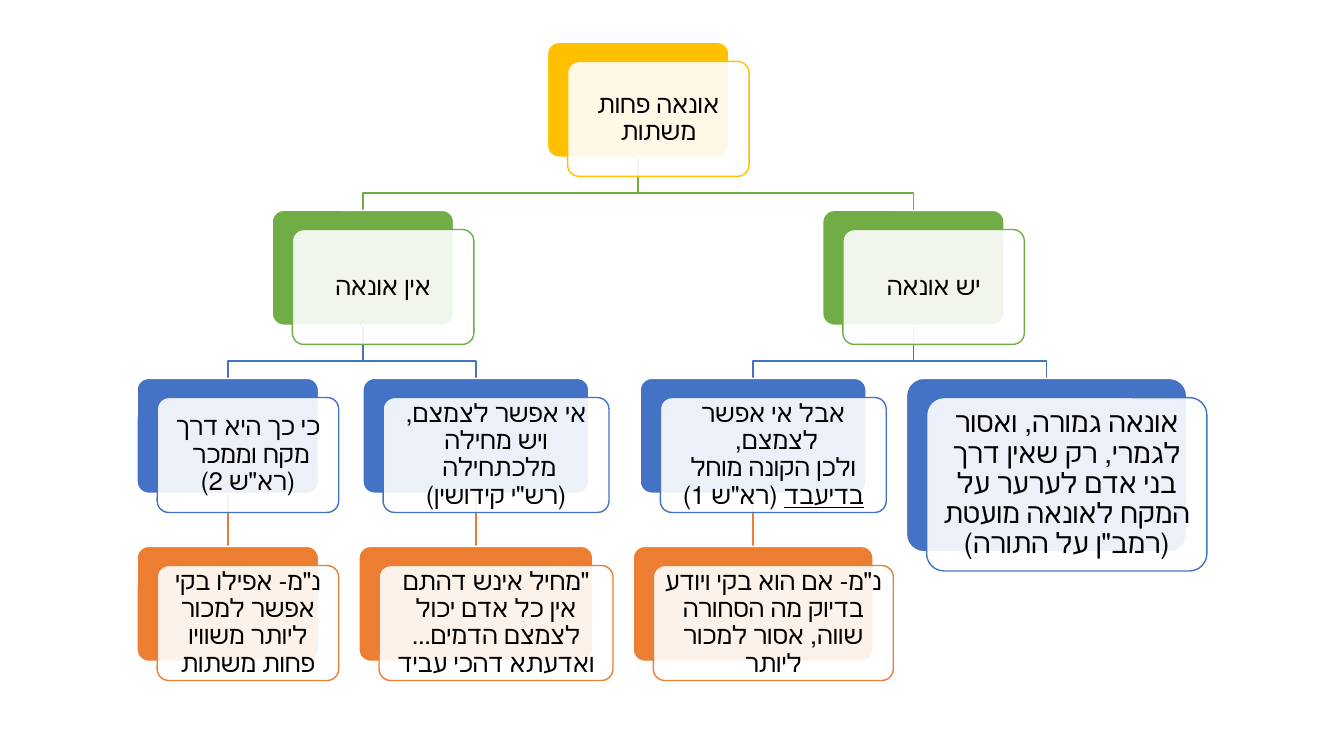
from pptx import Presentation
from pptx.dml.color import RGBColor
from pptx.enum.lang import MSO_LANGUAGE_ID
from pptx.enum.shapes import MSO_CONNECTOR, MSO_SHAPE
from pptx.enum.text import MSO_ANCHOR, PP_ALIGN
from pptx.oxml.ns import qn
from pptx.util import Inches, Pt
from lxml import etree

ROUNDED = MSO_SHAPE.ROUNDED_RECTANGLE
STRAIGHT = MSO_CONNECTOR.STRAIGHT
CENTER = PP_ALIGN.CENTER
MIDDLE = MSO_ANCHOR.MIDDLE
HEBREW = MSO_LANGUAGE_ID.HEBREW

LEVEL_COLORS = ["FFC000", "70AD47", "4472C4", "ED7D31"]
FONT = "Calibri"

# name: (parent, level, centre x, width, text); underscores enclose underlined words
NODES = {
    "root": (None, 0, 6.33, 1.8, "אונאה פחות משתות"),
    "applies": ("root", 1, 9.06, 1.8, "יש אונאה"),
    "exempt": ("root", 1, 3.6, 1.8, "אין אונאה"),
    "ramban": ("applies", 2, 10.38, 2.78,
               "אונאה גמורה, ואסור לגמרי, רק שאין דרך בני אדם לערער על המקח "
               "לאונאה מועטת\n(רמב\"ן על התורה)"),
    "rosh_one": ("applies", 2, 7.47, 2.24,
                 "אבל אי אפשר לצמצם, \nולכן הקונה מוחל _בדיעבד_ (רא\"ש 1)"),
    "expert_forbidden": ("rosh_one", 3, 7.47, 2.38,
                         "נ\"מ- אם הוא בקי ויודע בדיוק מה הסחורה שווה, אסור למכור ליותר"),
    "rashi": ("exempt", 2, 4.72, 2.24,
              "אי אפשר לצמצם, ויש מחילה מלכתחילה \n(רש\"י קידושין)"),
    "waiver": ("rashi", 3, 4.72, 2.32,
               "\"מחיל אינש דהתם אין כל אדם יכול לצמצם הדמים... ואדעתא דהכי עביד"),
    "rosh_two": ("exempt", 2, 2.26, 1.8, "כי כך היא דרך מקח וממכר \n(רא\"ש 2)"),
    "expert_allowed": ("rosh_two", 3, 2.26, 1.8,
                       "נ\"מ- אפילו בקי אפשר למכור ליותר משוויו פחות משתות"),
}
LARGE_NODE = "ramban"

TOP = 0.42
LEVEL_STEP = 1.667
BOX_HEIGHT = 1.14
LARGE_HEIGHT = 1.72
OFFSET_X, OFFSET_Y = 0.2, 0.19
BEND = 0.355


def color(hex_string):
    return RGBColor.from_string(hex_string)


def level_top(level):
    return TOP + level * LEVEL_STEP


def add_text(shape, text, *, size, inset, ink="000000"):
    """Fill the shape with one centred right-to-left paragraph."""
    frame = shape.text_frame
    frame.word_wrap = True
    frame.vertical_anchor = MIDDLE
    frame.margin_left = frame.margin_right = Inches(inset)
    frame.margin_top = frame.margin_bottom = Inches(inset)
    para = frame.paragraphs[0]
    para.alignment = CENTER
    para.line_spacing = 0.9
    para._p.get_or_add_pPr().set("rtl", "1")
    for part, words in enumerate(text.split("_")):
        for row, line in enumerate(words.split("\n")):
            if row:
                para.add_line_break()
            span = para.add_run()
            span.text = line
            span.font.size = Pt(size)
            span.font.name = FONT
            span.font.color.rgb = color(ink)
            span.font.underline = part % 2 == 1
            span.font.language_id = HEBREW


def add_card(page, left, top, width, height, *, fill, line, opacity=100):
    card = page.shapes.add_shape(
        ROUNDED, Inches(left), Inches(top), Inches(width), Inches(height))
    card.shadow.inherit = False
    card.adjustments[0] = 0.1
    card.fill.solid()
    card.fill.fore_color.rgb = color(fill)
    if opacity < 100:
        fill_color = card._element.spPr.find(qn("a:solidFill"))[0]
        etree.SubElement(fill_color, qn("a:alpha")).set("val", str(opacity * 1000))
    card.line.color.rgb = color(line)
    card.line.width = Pt(1)
    return card


def add_branch(page, parent_x, child_x, level):
    """Join a parent's bottom edge to the top of its child on the given level."""
    start = level_top(level - 1) + BOX_HEIGHT
    end = level_top(level)
    if parent_x == child_x:
        branch = page.shapes.add_connector(
            STRAIGHT, Inches(parent_x), Inches(start), Inches(child_x), Inches(end))
        etree.SubElement(branch._element.spPr, qn("a:effectLst"))
    else:
        bend = start + BEND
        corners = [(parent_x, bend), (child_x, bend), (child_x, end)]
        builder = page.shapes.build_freeform(Inches(parent_x), Inches(start))
        builder.add_line_segments(
            [(Inches(x), Inches(y)) for x, y in corners], close=False)
        branch = builder.convert_to_shape()
        branch.shadow.inherit = False
        branch.fill.background()
    branch.line.color.rgb = color(LEVEL_COLORS[level])
    branch.line.width = Pt(1)


def add_node(page, name):
    """Draw the coloured back card and the translucent text card over it."""
    _, level, center, width, text = NODES[name]
    large = name == LARGE_NODE
    height = LARGE_HEIGHT if large else BOX_HEIGHT
    left, top = center - width / 2, level_top(level)
    accent = LEVEL_COLORS[level]
    add_card(page, left, top, width, height, fill=accent, line="FFFFFF")
    front = add_card(page, left + OFFSET_X, top + OFFSET_Y, width, height,
                     fill="FFFFFF", line=accent, opacity=90)
    # The rounded corners add to the text inset in a preset shape.
    corner = 0.1 * height * 0.29
    add_text(front, text, size=20 if large else 18,
             inset=(0.13 if large else 0.1) - corner)


def main():
    deck = Presentation()
    deck.slide_width, deck.slide_height = Inches(13.33), Inches(7.5)
    page = deck.slides.add_slide(deck.slide_layouts[6])
    for parent, level, center, _, _ in NODES.values():
        if parent:
            add_branch(page, NODES[parent][2], center, level)
    for name in NODES:
        add_node(page, name)
    deck.save("out.pptx")


if __name__ == "__main__":
    main()
